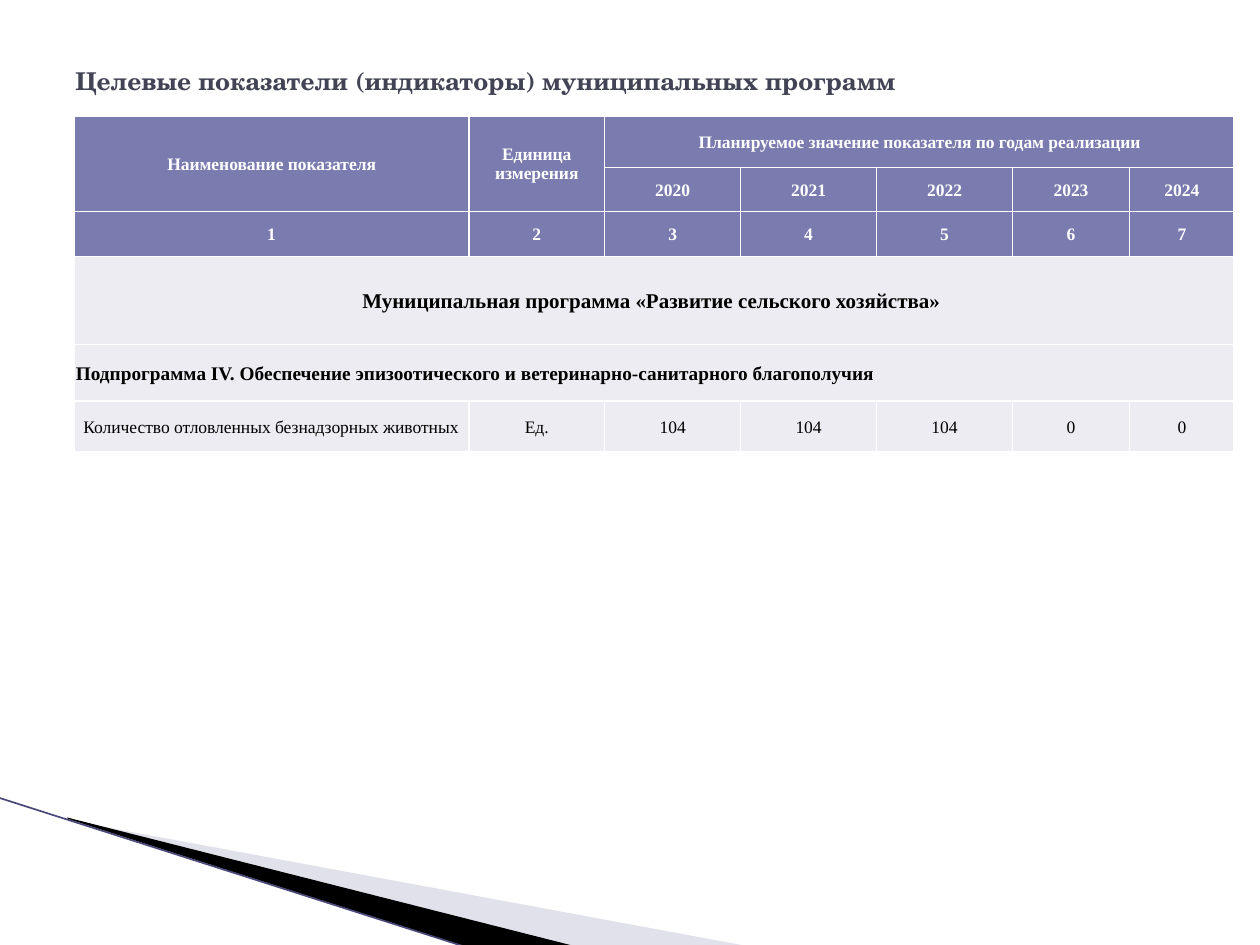
from lxml import etree
from pptx import Presentation
from pptx.dml.color import RGBColor
from pptx.enum import shapes, text
from pptx.oxml.ns import qn
from pptx.util import Cm, Pt

WHITE = RGBColor(0xFF, 0xFF, 0xFF)
BLACK = RGBColor(0x00, 0x00, 0x00)
TITLE_INK = RGBColor(0x42, 0x44, 0x56)
HEADER_FILL = RGBColor(0x7A, 0x7B, 0xAE)
BODY_FILL = RGBColor(0xEC, 0xEC, 0xF2)
WEDGE_FILL = RGBColor(0xB6, 0xB6, 0xD1)
EDGE_INK = RGBColor(0x4A, 0x48, 0x78)

TITLE_FONT = "TeX Gyre Schola"
TABLE_FONT = "Times New Roman"

COLUMNS = [7.95] + [2.74] * 4 + [2.36, 2.11]
ROWS = [1.04, 0.74, 0.91, 1.78, 1.14, 1.02]
HEADER_ROWS = 3
INDICATOR_ROW = 5
MERGES = [((0, 0), (1, 0)), ((0, 1), (1, 1)), ((0, 2), (0, 6)),
          ((3, 0), (3, 6)), ((4, 0), (4, 6))]
PROGRAM_SIZES = {3: 12, 4: 11}
CONTENT = [
    ["Наименование показателя", "Единица измерения",
     "Планируемое значение показателя по годам реализации"],
    ["", "", "2020", "2021", "2022", "2023", "2024"],
    ["1", "2", "3", "4", "5", "6", "7"],
    ["Муниципальная программа «Развитие сельского хозяйства» "],
    ["Подпрограмма IV. Обеспечение эпизоотического и "
     "ветеринарно-санитарного благополучия"],
    ["Количество отловленных безнадзорных животных", "Ед.",
     "104", "104", "104", "0", "0"],
]


def add_run(paragraph, words, font_name, size, color, bold):
    run = paragraph.add_run()
    run.text = words
    run.font.name = font_name
    run.font.size = Pt(size)
    run.font.color.rgb = color
    run.font.bold = bold


def add_wedge(slide, points, color, opacity=None):
    """Draw a filled outline through points given in centimetres."""
    start, *others = [(Cm(x), Cm(y)) for x, y in points]
    builder = slide.shapes.build_freeform(*start)
    builder.add_line_segments(others, close=True)
    wedge = builder.convert_to_shape()
    wedge.shadow.inherit = False
    wedge.line.fill.background()
    wedge.fill.solid()
    wedge.fill.fore_color.rgb = color
    if opacity is not None:
        tint = wedge.fill._xPr.find(qn("a:solidFill"))[0]
        etree.SubElement(tint, qn("a:alpha"), val=str(opacity * 1000))


def add_edge(slide, start, end):
    edge = slide.shapes.add_connector(
        shapes.MSO_CONNECTOR.STRAIGHT, *[Cm(v) for v in start + end])
    edge.line.color.rgb = EDGE_INK
    edge.line.width = Pt(0.95)
    etree.SubElement(edge._element.spPr, qn("a:effectLst"))


def add_title(slide, words):
    title = slide.shapes.add_textbox(Cm(1.27), Cm(0.76), Cm(22.86), Cm(1.75))
    frame = title.text_frame
    frame.word_wrap = True
    frame.vertical_anchor = text.MSO_ANCHOR.MIDDLE
    add_run(frame.paragraphs[0], words, TITLE_FONT, 14, TITLE_INK, True)


def set_borders(cell):
    properties = cell._tc.get_or_add_tcPr()
    for side in ("lnL", "lnR", "lnT", "lnB"):
        border = etree.SubElement(properties, qn(f"a:{side}"), w=str(Pt(1)))
        fill = etree.SubElement(border, qn("a:solidFill"))
        etree.SubElement(fill, qn("a:srgbClr"), val=str(WHITE))


def style_cell(cell, row):
    set_borders(cell)
    cell.fill.solid()
    cell.fill.fore_color.rgb = HEADER_FILL if row < HEADER_ROWS else BODY_FILL
    cell.vertical_anchor = text.MSO_ANCHOR.MIDDLE
    is_indicator = row == INDICATOR_ROW
    cell.margin_left = cell.margin_right = Cm(0.18 if is_indicator else 0.03)
    cell.margin_top = Cm(0 if is_indicator else 0.03)
    cell.margin_bottom = 0


def write_cell(cell, words, row, column):
    paragraph = cell.text_frame.paragraphs[0]
    is_left = row >= 4 and column == 0
    paragraph.alignment = text.PP_ALIGN.LEFT if is_left else text.PP_ALIGN.CENTER
    if row == INDICATOR_ROW:
        paragraph.line_spacing = 1.15
    add_run(paragraph, words, TABLE_FONT, PROGRAM_SIZES.get(row, 10),
            WHITE if row < HEADER_ROWS else BLACK, row != INDICATOR_ROW)


def add_indicator_table(slide):
    table = slide.shapes.add_table(
        len(ROWS), len(COLUMNS), Cm(1.5), Cm(2.34),
        Cm(sum(COLUMNS)), Cm(sum(ROWS))).table
    for column, width in zip(table.columns, COLUMNS):
        column.width = Cm(width)
    for row, height in zip(table.rows, ROWS):
        row.height = Cm(height)
    for row in range(len(ROWS)):
        for column in range(len(COLUMNS)):
            style_cell(table.cell(row, column), row)
    for first, last in MERGES:
        table.cell(*first).merge(table.cell(*last))
    for row, entries in enumerate(CONTENT):
        for column, words in enumerate(entries):
            if words:
                write_cell(table.cell(row, column), words, row, column)


def main():
    deck = Presentation()
    deck.slide_width, deck.slide_height = Cm(25.4), Cm(19.05)
    slide = deck.slides.add_slide(deck.slide_layouts[6])
    add_wedge(slide, [(1.4, 16.54), (15.11, 19.08), (11.58, 19.08),
                      (1.4, 16.51)], WEDGE_FILL, opacity=40)
    add_wedge(slide, [(1.35, 16.48), (11.61, 19.08), (9.45, 19.1),
                      (1.37, 16.51)], BLACK)
    add_edge(slide, (-0.03, 16.08), (9.42, 19.1))
    add_title(slide, "Целевые показатели (индикаторы) муниципальных программ")
    add_indicator_table(slide)
    deck.save("out.pptx")


if __name__ == "__main__":
    main()
